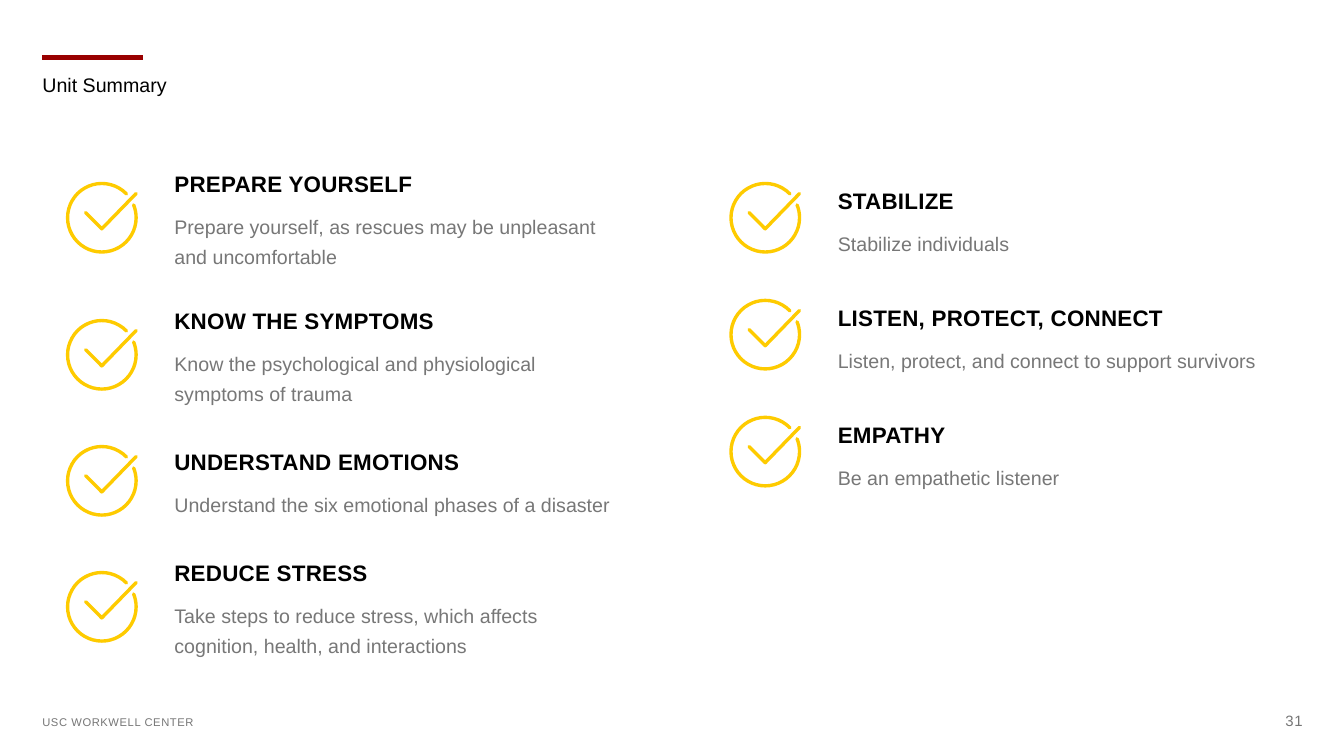
from lxml import etree
from pptx import Presentation
from pptx import util as u
from pptx.dml.color import RGBColor
from pptx.enum import shapes, text
from pptx.oxml.ns import qn

FONT = "Arial"
BLACK, GREY, BODY_GREY, GOLD, RED = "000000", "767676", "777777", "FECB00", "990000"

# Each item: icon top, heading top, heading, description, description height
LEFT_ITEMS = [
    (1.8, 1.69, "PREPARE YOURSELF",
     "Prepare yourself, as rescues may be unpleasant and uncomfortable", 0.58),
    (3.16, 3.05, "KNOW THE SYMPTOMS",
     "Know the psychological and physiological symptoms of trauma", 0.58),
    (4.41, 4.45, "UNDERSTAND EMOTIONS",
     "Understand the six emotional phases of a disaster", 0.27),
    (5.66, 5.55, "REDUCE STRESS",
     "Take steps to reduce stress, which affects cognition, health, and interactions", 0.58),
]
RIGHT_ITEMS = [
    (1.8 + 1.16 * i, 1.86 + 1.16 * i, heading, description, 0.27)
    for i, (heading, description) in enumerate([
        ("STABILIZE", "Stabilize individuals"),
        ("LISTEN, PROTECT, CONNECT", "Listen, protect, and connect to support survivors"),
        ("EMPATHY", "Be an empathetic listener"),
    ])
]


def rgb(color):
    return RGBColor.from_string(color)


def write(sp, content, size, color, bold=False, spacing=None, line_spacing=None,
          align=text.PP_ALIGN.LEFT):
    """Put one formatted paragraph in a shape without insets."""
    tf = sp.text_frame
    tf.word_wrap = True
    tf.auto_size = text.MSO_AUTO_SIZE.NONE
    tf.vertical_anchor = text.MSO_ANCHOR.TOP
    tf.margin_left = tf.margin_right = tf.margin_top = tf.margin_bottom = 0
    p = tf.paragraphs[0]
    r = p.add_run()
    r.text = content
    p.alignment = align
    if line_spacing:
        p.line_spacing = line_spacing
    p.font.name, p.font.size, p.font.bold = FONT, u.Pt(size), bold
    p.font.color.rgb = rgb(color)
    if spacing:
        r.font._element.set("spc", str(spacing))


def add_text(s, x, y, w, h, content, size, color, **style):
    sp = s.shapes.add_textbox(u.Inches(x), u.Inches(y), u.Inches(w), u.Inches(h))
    write(sp, content, size, color, **style)


def add_check_icon(s, x, y, size=0.72):
    """A tick breaking through an open ring, both drawn with a round pen."""
    inset = 0.02
    ring = s.shapes.add_shape(shapes.MSO_SHAPE.ARC, u.Inches(x + inset), u.Inches(y + inset),
                              u.Inches(size - 2 * inset), u.Inches(size - 2 * inset))
    # Start and end angles of the ring, in units of 100000/60000 degree
    ring.adjustments[0], ring.adjustments[1] = 338 * 0.6, 316 * 0.6

    corners = [(u.Inches(x + dx), u.Inches(y + dy))
               for dx, dy in ((0.2, 0.31), (0.36, 0.47), (0.7, 0.12))]
    fb = s.shapes.build_freeform(*corners[0])
    fb.add_line_segments(corners[1:], close=False)
    tick = fb.convert_to_shape()

    for sp in (ring, tick):
        sp.shadow.inherit = False
        sp.fill.background()
        sp.line.color.rgb = rgb(GOLD)
        sp.line.width = u.Pt(2.4)
        ln = sp._element.spPr.find(qn("a:ln"))
        ln.set("cap", "rnd")
        etree.SubElement(ln, qn("a:round"))


def add_header(s, x, y):
    # Accent bar
    bar = s.shapes.add_connector(shapes.MSO_CONNECTOR.STRAIGHT, u.Inches(x), u.Inches(y),
                                 u.Inches(x + 1), u.Inches(y))
    bar.line.color.rgb = rgb(RED)
    bar.line.width = u.Pt(4)
    etree.SubElement(bar._element.spPr, qn("a:effectLst"))
    # Title
    title = s.shapes.title
    title.left, title.top = u.Inches(x), u.Inches(y + 0.15)
    title.width, title.height = u.Inches(6.45), u.Inches(0.56)
    write(title, "Unit Summary", 14, BLACK)


def add_column(s, x, items):
    for icon_top, top, heading, description, height in items:
        add_check_icon(s, x, icon_top)
        add_text(s, x + 1.08, top, 4.37, 0.27, heading, 16, BLACK, bold=True, spacing=20)
        add_text(s, x + 1.08, top + 0.37, 4.37, height, description, 14, BODY_GREY,
                 line_spacing=1.3)


def add_footer(s, x, right):
    add_text(s, x, 7.1, 2.8, 0.13, "USC WORKWELL CENTER", 8, GREY, spacing=40)
    add_text(s, right - 0.3, 7.06, 0.3, 0.18, "31", 10.7, GREY, spacing=40,
             align=text.PP_ALIGN.RIGHT)


def main():
    prs = Presentation()
    prs.slide_width, prs.slide_height = u.Inches(13.33), u.Inches(7.5)
    s = prs.slides.add_slide(prs.slide_layouts[5])
    add_header(s, 0.42, 0.57)
    add_column(s, 0.65, LEFT_ITEMS)
    add_column(s, 7.23, RIGHT_ITEMS)
    add_footer(s, 0.42, 12.92)
    prs.save("out.pptx")


if __name__ == "__main__":
    main()
